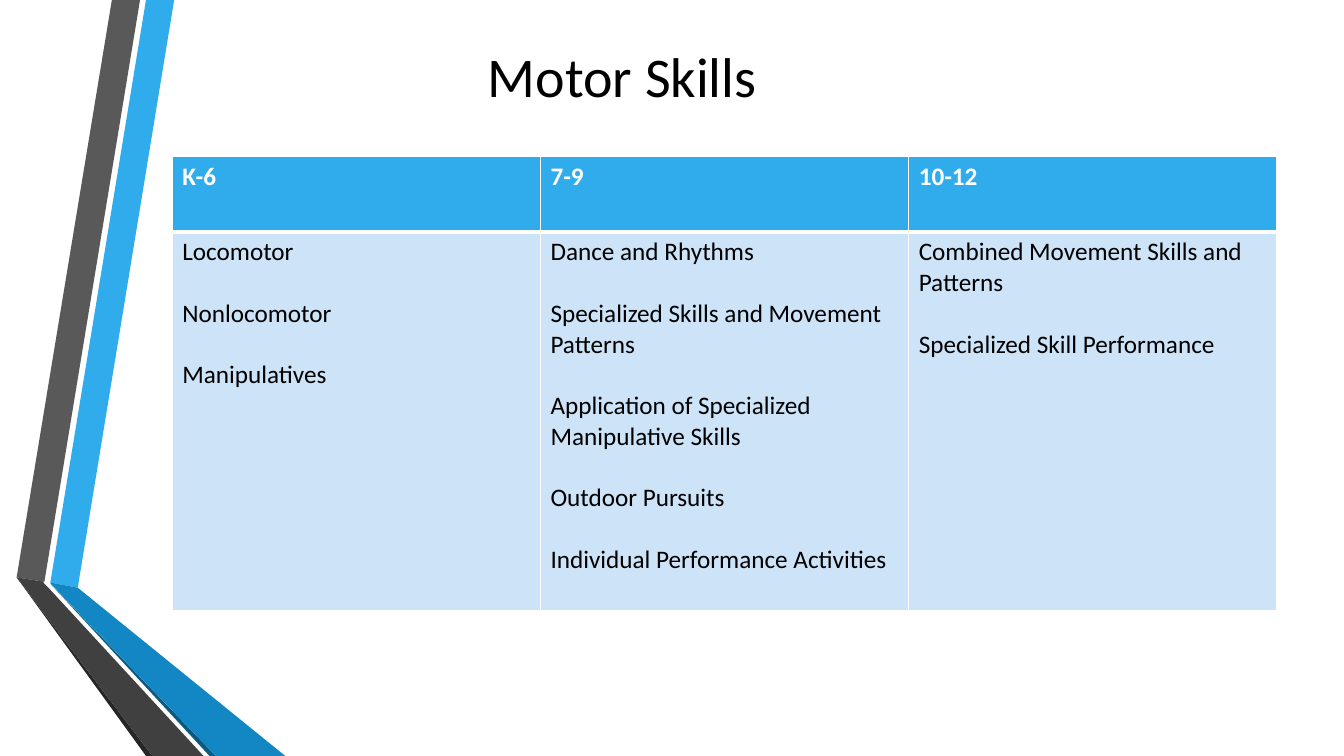
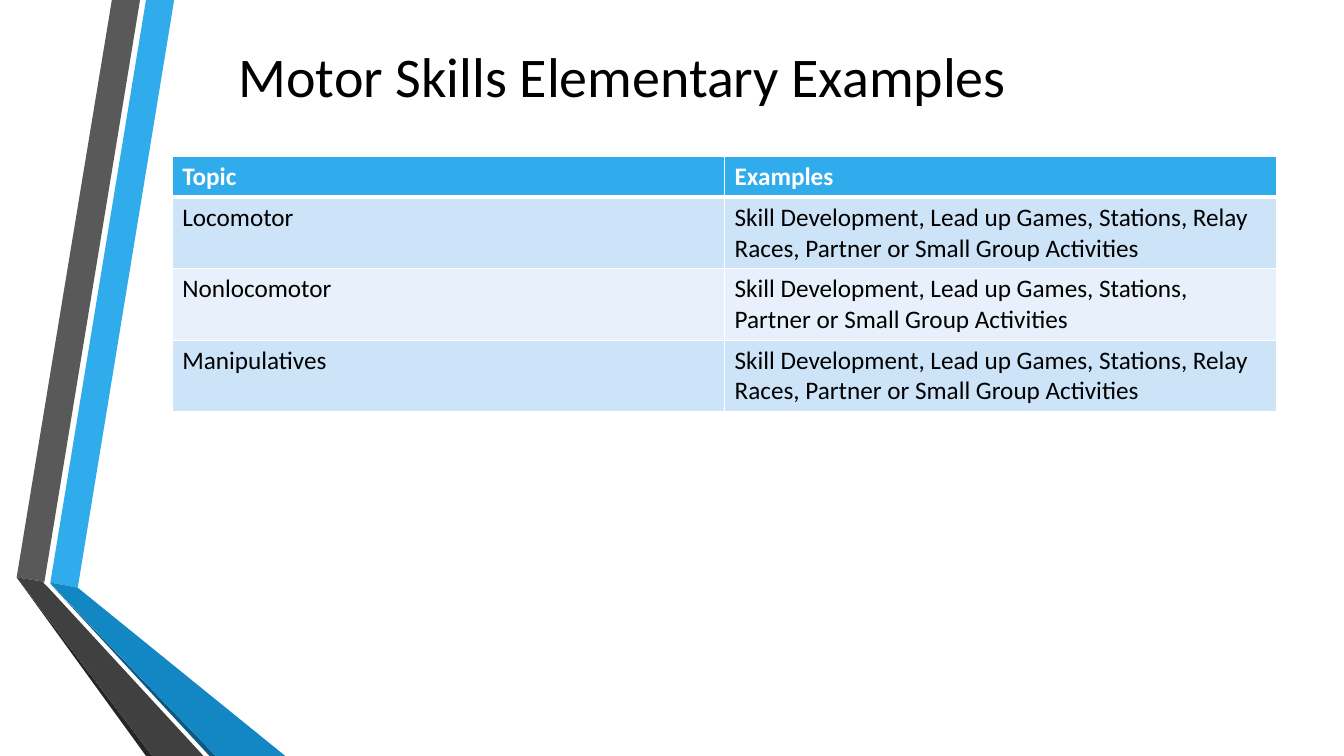
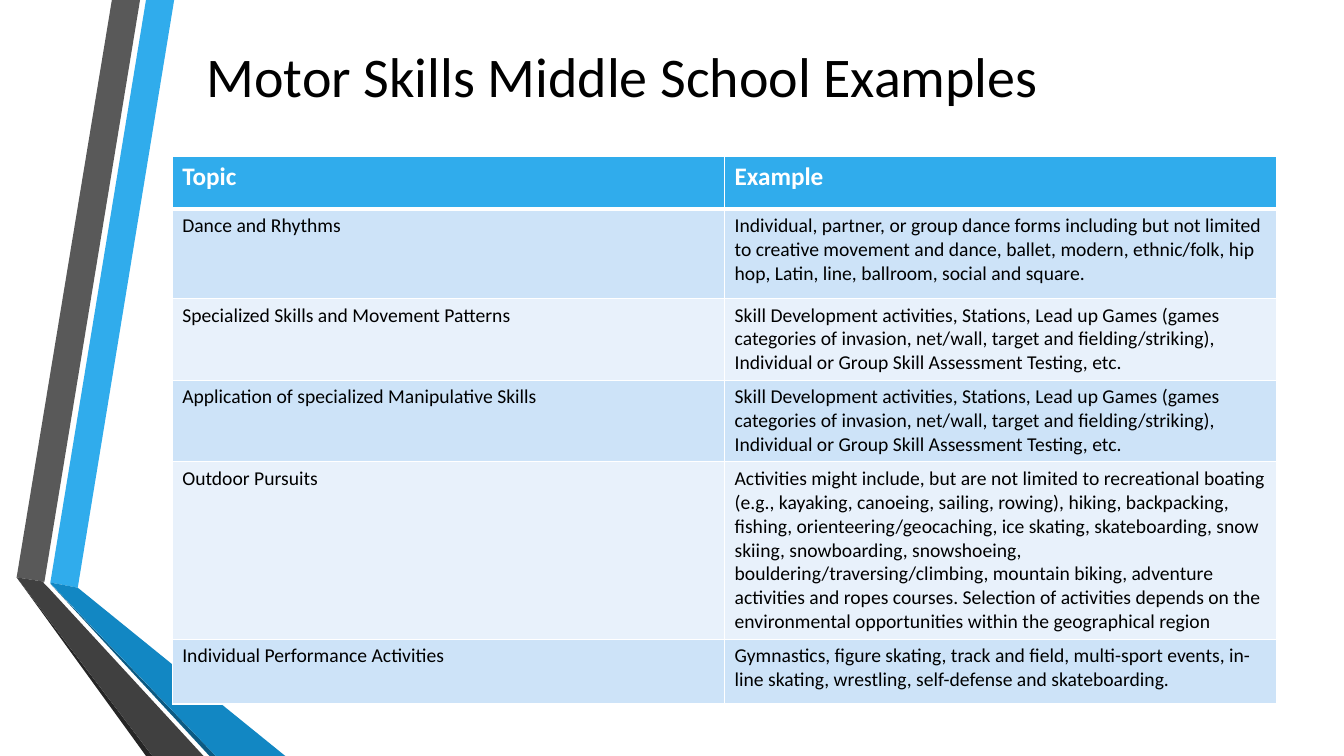
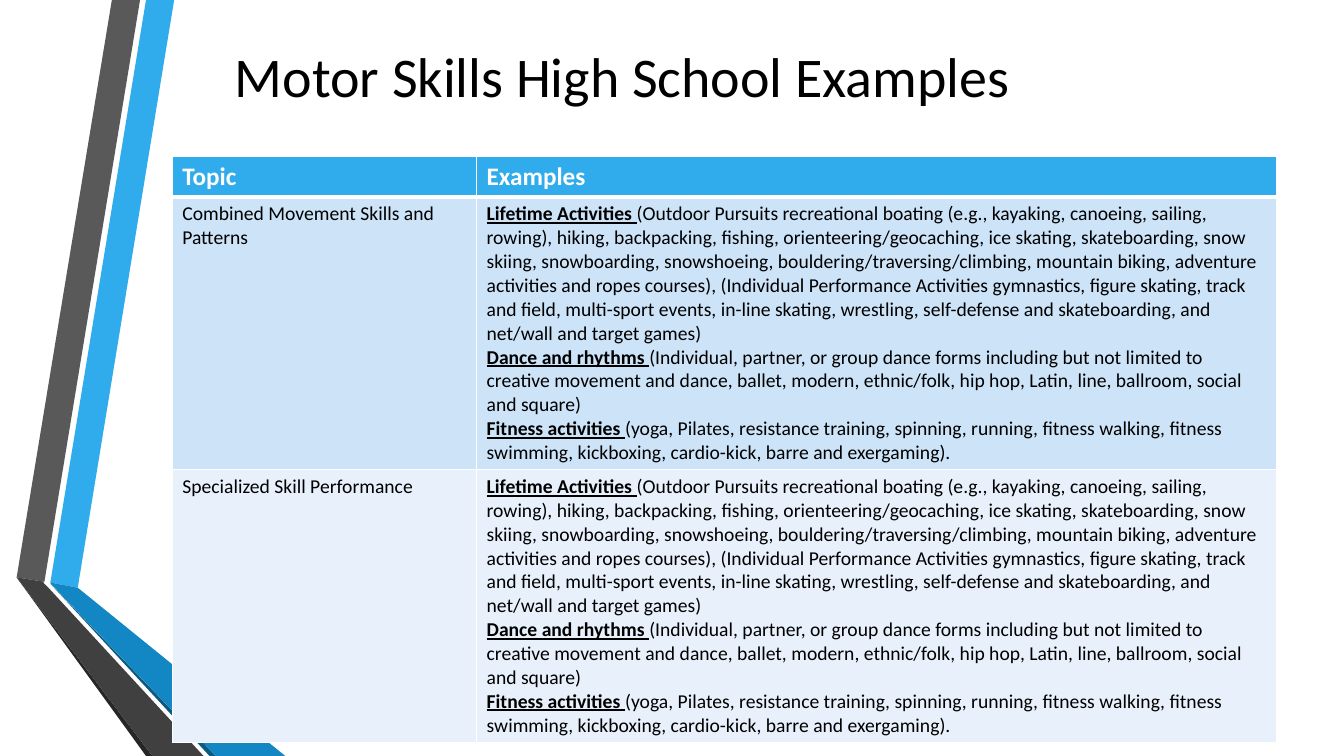
from lxml import etree
from pptx import Presentation
from pptx import util as u
from pptx.dml.color import RGBColor
from pptx.enum import text as t
from pptx.oxml import ns

COLORS = {
    "blue": "30ACEC", "blue_deep": "1287C3", "blue_edge": "0C5A82",
    "gray": "595959", "gray_deep": "404040", "gray_edge": "262626",
    "row_odd": "CDE3F8", "row_even": "E8F1FB",
    "white": "FFFFFF", "black": "000000",
}
FONT = "Calibri"
LEFT = 4.34

BANDS = [
    ("blue", [(1.27, 14.68), (1.96, 14.81), (4.39, 0), (3.68, 0)]),
    ("gray", [(3.53, 0), (2.82, 0), (0.42, 14.55), (1.12, 14.66)]),
    ("gray_edge", [(0.42, 14.55), (3.68, 19.05), (3.84, 19.05)]),
    ("blue_edge", [(1.27, 14.71), (5.28, 19.05), (5.44, 19.05)]),
    ("blue_deep", [(1.27, 14.7), (5.44, 19.05), (7.19, 19.05), (1.96, 14.81), (1.27, 14.68)]),
    ("gray_deep", [(5.13, 19.05), (1.22, 14.81), (1.09, 14.68), (1.12, 14.66),
                   (0.42, 14.55), (3.84, 19.05)]),
]

GAMES = ("Skill Development activities, Stations, Lead up Games (games categories of invasion, "
         "net/wall, target and fielding/striking), Individual or Group Skill Assessment Testing, etc.")
RELAYS = ("Skill Development, Lead up Games, Stations, Relay Races, "
          "Partner or Small Group Activities")
DANCES = ("ndividual, partner, or group dance forms including but not limited to creative movement "
          "and dance, ballet, modern, ethnic/folk, hip hop, Latin, line, ballroom, social and square")
OUTDOORS = ("recreational boating (e.g., kayaking, canoeing, sailing, rowing), hiking, backpacking, "
            "fishing, orienteering/geocaching, ice skating, skateboarding, snow skiing, "
            "snowboarding, snowshoeing, bouldering/traversing/climbing, mountain biking, "
            "adventure activities and ropes courses")
SPORTS = ("ymnastics, figure skating, track and field, multi-sport events, in-line skating, "
          "wrestling, self-defense and skateboarding")
HIGH_SCHOOL = [
    ("Lifetime Activities ",
     f"(Outdoor Pursuits {OUTDOORS}), (Individual Performance Activities g{SPORTS}, "
     "and net/wall and target games)"),
    ("Dance and rhythms ", f"(I{DANCES})"),
    ("Fitness activities ",
     "(yoga, Pilates, resistance training, spinning, running, fitness walking, "
     "fitness swimming, kickboxing, cardio-kick, barre and exergaming)."),
]


def rgb(name):
    return RGBColor.from_string(COLORS[name])


def write(p, text, size=18, color="black", bold=False, underline=False):
    r = p.add_run()
    r.text = text
    r.font.name = FONT
    r.font.size = u.Pt(size)
    r.font.color.rgb = rgb(color)
    r.font.bold = bold
    r.font.underline = underline


class Deck:
    def __init__(self):
        self.prs = Presentation()
        self.prs.slide_width = u.Cm(33.87)
        self.prs.slide_height = u.Cm(19.05)
        self.s = None

    def slide(self, title):
        self.s = self.prs.slides.add_slide(self.prs.slide_layouts[6])
        for color, points in BANDS:
            self.band(color, points)
        self.title(title)

    def band(self, color, points):
        start, *rest = [(u.Cm(x), u.Cm(y)) for x, y in points]
        builder = self.s.shapes.build_freeform(*start)
        builder.add_line_segments(rest, close=True)
        sp = builder.convert_to_shape()
        sp.shadow.inherit = False
        sp.fill.solid()
        sp.fill.fore_color.rgb = rgb(color)
        sp.line.fill.background()

    def title(self, text):
        sp = self.s.shapes.add_textbox(u.Cm(LEFT), u.Cm(0.61), u.Cm(22.68), u.Cm(2.59))
        tf = sp.text_frame
        tf.word_wrap = True
        tf.vertical_anchor = t.MSO_ANCHOR.MIDDLE
        p = tf.paragraphs[0]
        p.alignment = t.PP_ALIGN.CENTER
        write(p, text, size=40)

    def borders(self, cell, **widths):
        tc_pr = cell._tc.get_or_add_tcPr()
        for side in "LRTB":
            ln = etree.SubElement(tc_pr, ns.qn(f"a:ln{side}"), w=str(u.Pt(widths.get(side, 1))))
            fill = etree.SubElement(ln, ns.qn("a:solidFill"))
            etree.SubElement(fill, ns.qn("a:srgbClr"), val=COLORS["white"])

    def cell(self, cell, content, fill, gap=0, **fmt):
        cell.fill.solid()
        cell.fill.fore_color.rgb = rgb(fill)
        tf = cell.text_frame
        for i, item in enumerate(content if isinstance(content, list) else [content]):
            p = tf.add_paragraph() if i else tf.paragraphs[0]
            if i and gap:
                p.space_before = u.Pt(gap)
            if isinstance(item, tuple):
                lead, item = item
                write(p, lead, **{**fmt, "bold": True, "underline": True})
            write(p, item, **fmt)

    def table(self, widths, heights, rows, size=18, gap=0):
        frame = self.s.shapes.add_table(len(rows), len(widths), u.Cm(LEFT), u.Cm(3.94),
                                        u.Cm(sum(widths)), u.Cm(sum(heights)))
        table = frame.table
        for column, width in zip(table.columns, widths):
            column.width = u.Cm(width)
        for i, (row, height) in enumerate(zip(rows, heights)):
            table.rows[i].height = u.Cm(height)
            for j, content in enumerate(row):
                cell = table.cell(i, j)
                if i == 0:
                    self.borders(cell, B=3)
                    self.cell(cell, content, "blue", color="white", bold=True)
                else:
                    self.borders(cell, T=3 if i == 1 else 1)
                    self.cell(cell, content, "row_odd" if i % 2 else "row_even",
                              gap=gap, size=size)


def main():
    deck = Deck()

    deck.slide("Motor Skills")
    deck.table([9.28] * 3, [1.9, 9.55], [
        ["K-6", "7-9", "10-12"],
        [["Locomotor", "Nonlocomotor", "Manipulatives"],
         ["Dance and Rhythms", "Specialized Skills and Movement Patterns",
          "Application of Specialized Manipulative Skills", "Outdoor Pursuits",
          "Individual Performance Activities"],
         ["Combined Movement Skills and Patterns", "Specialized Skill Performance"]],
    ], gap=22)

    deck.slide("Motor Skills Elementary Examples")
    deck.table([13.92] * 2, [1.03] + [1.8] * 3, [
        ["Topic", "Examples"],
        ["Locomotor", RELAYS],
        ["Nonlocomotor", RELAYS.replace("Relay Races, ", "")],
        ["Manipulatives", RELAYS],
    ])

    deck.slide("Motor Skills Middle School Examples")
    deck.table([13.92] * 2, [1.32, 2.26, 2.06, 2.06, 4.47, 1.63], [
        ["Topic", "Example"],
        ["Dance and Rhythms", f"I{DANCES}."],
        ["Specialized Skills and Movement Patterns", GAMES],
        ["Application of specialized Manipulative Skills", GAMES],
        ["Outdoor Pursuits",
         f"Activities might include, but are not limited to {OUTDOORS}. Selection of activities "
         "depends on the environmental opportunities within the geographical region"],
        ["Individual Performance Activities", f"G{SPORTS}."],
    ], size=14)

    deck.slide("Motor Skills High School Examples")
    deck.table([7.67, 20.17], [1.03, 6.87, 6.87], [
        ["Topic", "Examples"],
        ["Combined Movement Skills and Patterns", HIGH_SCHOOL],
        ["Specialized Skill Performance", HIGH_SCHOOL],
    ], size=14)

    deck.prs.save("out.pptx")


if __name__ == "__main__":
    main()
